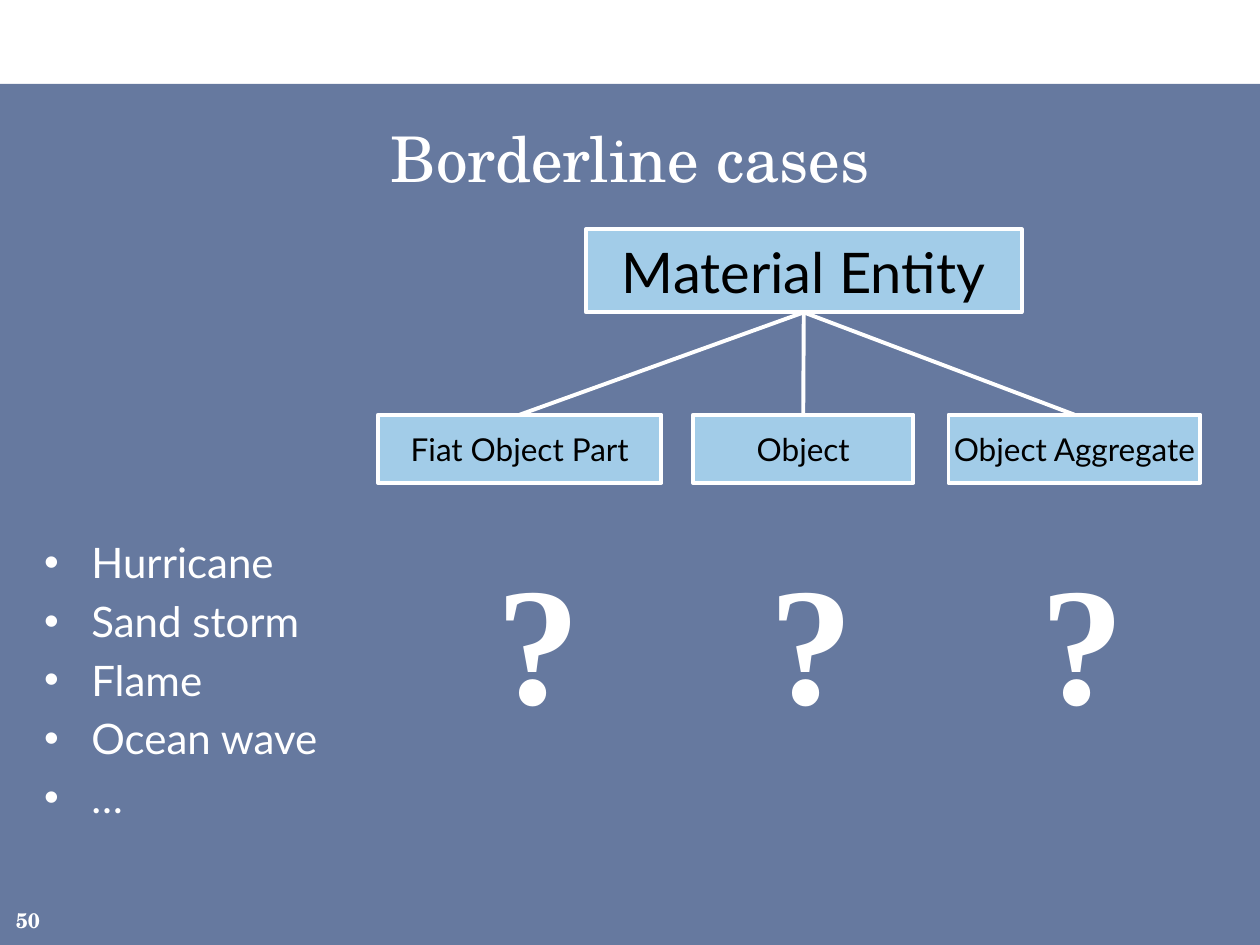
from lxml import etree
from pptx import Presentation
from pptx.dml.color import RGBColor
from pptx.enum.shapes import MSO_CONNECTOR, MSO_SHAPE
from pptx.enum.text import MSO_ANCHOR, MSO_AUTO_SIZE, PP_ALIGN
from pptx.oxml.ns import qn
from pptx.util import Pt

RECTANGLE = MSO_SHAPE.RECTANGLE
STRAIGHT = MSO_CONNECTOR.STRAIGHT
TOP, MIDDLE = MSO_ANCHOR.TOP, MSO_ANCHOR.MIDDLE
CENTER, RIGHT = PP_ALIGN.CENTER, PP_ALIGN.RIGHT
NO_AUTOSIZE = MSO_AUTO_SIZE.NONE

WHITE, BLACK, NAVY, SKY = "FFFFFF", "000000", "002060", "A2CCE8"
SERIF, SANS, MARK = "TeX Gyre Schola", "Lato", "Times New Roman"
LINE_WIDTH = 2.25

EXAMPLES = ["Hurricane", "Sand storm", "Flame", "Ocean wave", "…"]
ROOT = ("Material Entity", (334.8, 131, 249, 47.5), 32)
CHILD_TOP, CHILD_HEIGHT = 237, 39
CHILDREN = [  # label, left, width
    ("Fiat Object Part", 216, 162),
    ("Object", 396, 126),
    ("Object Aggregate", 542, 144),
]
MARK_LEFTS = [276, 432, 587]


def color(hex_value):
    return RGBColor.from_string(hex_value)


def place(shape, box):
    for side, value in zip(("left", "top", "width", "height"), box):
        setattr(shape, side, Pt(value))


def format_font(font, name, size, hex_value, bold=False):
    values = {"name": name, "size": Pt(size), "bold": bold}
    for attribute, value in values.items():
        setattr(font, attribute, value)
    font.color.rgb = color(hex_value)


def write_line(shape, text, font, align, anchor=MIDDLE, wrap=False):
    """Fill a shape with one formatted paragraph; font is format_font's values."""
    frame = shape.text_frame
    values = {"text": text, "word_wrap": wrap, "auto_size": NO_AUTOSIZE,
              "vertical_anchor": anchor}
    for attribute, value in values.items():
        setattr(frame, attribute, value)
    paragraph = frame.paragraphs[0]
    paragraph.alignment = align
    format_font(paragraph.font, *font)


def add_rectangle(slide, box, fill):
    rectangle = slide.shapes.add_shape(RECTANGLE, *map(Pt, box))
    rectangle.shadow.inherit = False
    rectangle.fill.solid()
    rectangle.fill.fore_color.rgb = color(fill)
    return rectangle


def add_backdrop(slide):
    """Add the translucent panel behind everything else."""
    panel = add_rectangle(slide, (0, 48, 720, 492), NAVY)
    panel.line.fill.background()
    tint = panel.fill._xPr.find(qn("a:solidFill"))[0]
    etree.SubElement(tint, qn("a:alpha"), val="60000")
    slide.shapes._spTree.insert(2, panel._element)


def add_class_box(slide, label, box, size):
    class_box = add_rectangle(slide, box, SKY)
    class_box.line.color.rgb = color(WHITE)
    class_box.line.width = Pt(LINE_WIDTH)
    write_line(class_box, label, (SANS, size, BLACK), CENTER)


def add_branch(slide, start, end):
    branch = slide.shapes.add_connector(STRAIGHT, *map(Pt, start + end))
    branch.line.color.rgb = color(WHITE)
    branch.line.width = Pt(LINE_WIDTH)
    etree.SubElement(branch._element.spPr, qn("a:effectLst"))


def add_label(slide, text, box, font, align, anchor):
    label = slide.shapes.add_textbox(*map(Pt, box))
    write_line(label, text, font, align, anchor)


def add_hierarchy(slide):
    root_label, root_box, root_size = ROOT
    left, top, width, height = root_box
    root_foot = (left + width / 2, top + height)
    for _, child_left, child_width in CHILDREN:
        add_branch(slide, root_foot, (child_left + child_width / 2, CHILD_TOP))
    add_class_box(slide, root_label, root_box, root_size)
    for label, child_left, child_width in CHILDREN:
        child_box = (child_left, CHILD_TOP, child_width, CHILD_HEIGHT)
        add_class_box(slide, label, child_box, 18)


def add_bullet(paragraph, indent):
    properties = paragraph._p.get_or_add_pPr()
    properties.set("marL", str(Pt(indent)))
    properties.set("indent", str(-Pt(indent)))
    bullet_color = etree.SubElement(properties, qn("a:buClr"))
    etree.SubElement(bullet_color, qn("a:srgbClr"), val=WHITE)
    etree.SubElement(properties, qn("a:buFont"), typeface="Arial")
    etree.SubElement(properties, qn("a:buChar"), char="•")


def fill_examples(body):
    place(body, (18, 303, 684, 219))
    frame = body.text_frame
    frame.auto_size = NO_AUTOSIZE
    frame.vertical_anchor = TOP
    frame.text = "\n".join(EXAMPLES)
    for index, paragraph in enumerate(frame.paragraphs):
        add_bullet(paragraph, 27)
        paragraph.space_before = Pt(4.8 if index else 0)
        format_font(paragraph.font, SANS, 24, WHITE)


def main():
    presentation = Presentation()
    presentation.slide_width, presentation.slide_height = Pt(720), Pt(540)
    slide = presentation.slides.add_slide(presentation.slide_layouts[1])
    title, body = slide.placeholders

    add_backdrop(slide)
    place(title, (18, 60, 684, 60))
    write_line(title, "Borderline cases", (SERIF, 36, WHITE), CENTER, wrap=True)
    fill_examples(body)
    add_hierarchy(slide)
    for left in MARK_LEFTS:
        add_label(slide, "?", (left, 303, 63, 124), (MARK, 96, WHITE, True),
                  CENTER, TOP)
    add_label(slide, "50", (0, 511, 30, 29), (SERIF, 12, WHITE, True),
              RIGHT, MIDDLE)
    presentation.save("out.pptx")


if __name__ == "__main__":
    main()
